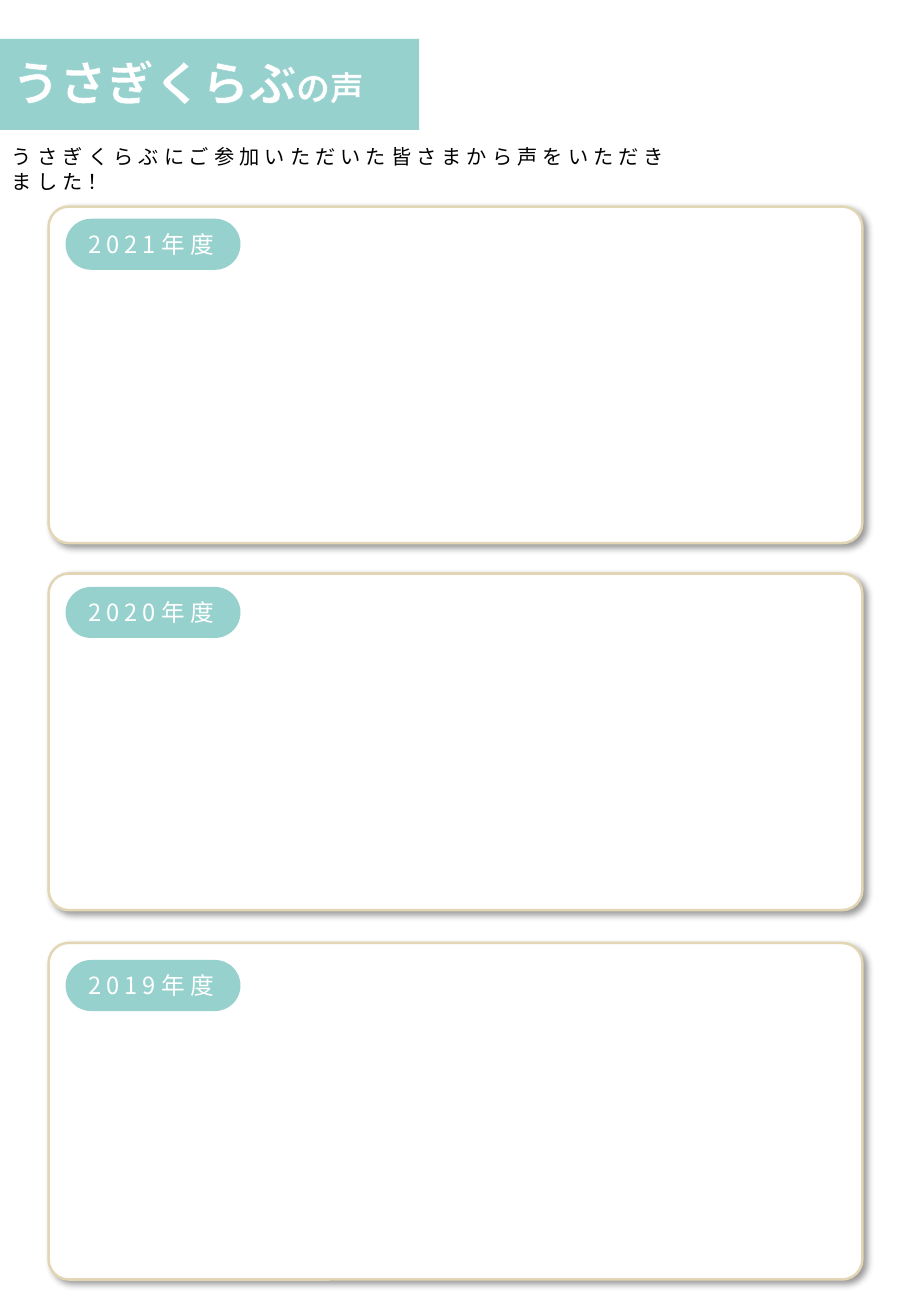
from lxml import etree
from pptx import Presentation, util as u
from pptx.dml.color import RGBColor
from pptx.enum import shapes, text
from pptx.oxml.ns import qn

COLORS = {"mint": "97D1CE", "sand": "E2D6B4", "white": "FFFFFF", "black": "000000"}
FONT = "Noto Sans CJK JP"
YEARS = [("2021年度", 1.7, 1.8), ("2020年度", 4.72, 4.83), ("2019年度", 7.76, 7.9)]


def rgb(name):
    return RGBColor.from_string(COLORS[name])


def inches(*values):
    return [u.Inches(v) for v in values]


def add_block(s, kind, box, fill, radius=None):
    sp = s.shapes.add_shape(kind, *inches(*box))
    sp.shadow.inherit = False
    sp.fill.solid()
    sp.fill.fore_color.rgb = rgb(fill)
    sp.line.fill.background()
    if radius is not None:
        sp.adjustments[0] = radius
    return sp


def add_shadow(sp):
    effects = sp.element.spPr.find(qn("a:effectLst"))
    shadow = etree.SubElement(effects, qn("a:outerShdw"), blurRad=str(u.Pt(4)),
                              dist=str(u.Pt(3)), dir=str(45 * 60000),
                              algn="tl", rotWithShape="0")
    color = etree.SubElement(shadow, qn("a:srgbClr"), val=COLORS["black"])
    etree.SubElement(color, qn("a:alpha"), val="40000")


def set_font(p, size, color, spacing=0):
    p.font.name = FONT
    p.font.size = u.Pt(size)
    p.font.color.rgb = rgb(color)
    props = p._p.pPr.find(qn("a:defRPr"))
    props.set("spc", str(spacing * 100))
    props.find(qn("a:latin")).addnext(etree.Element(qn("a:ea"), typeface=FONT))


def add_label(s, words, box, size, color):
    tf = s.shapes.add_textbox(*inches(*box)).text_frame
    tf.word_wrap = True
    tf.auto_size = text.MSO_AUTO_SIZE.SHAPE_TO_FIT_TEXT
    p = tf.paragraphs[0]
    p.text = words
    set_font(p, size, color, spacing=3)


def add_outline(r, color, width):
    line = etree.Element(qn("a:ln"), w=str(u.Pt(width)))
    fill = etree.SubElement(line, qn("a:solidFill"))
    etree.SubElement(fill, qn("a:srgbClr"), val=COLORS[color])
    r._r.get_or_add_rPr().insert(0, line)


def add_title(s):
    banner = add_block(s, shapes.MSO_SHAPE.RECTANGLE, (0, 0.32, 3.45, 0.75), "mint")
    title = s.shapes.title
    banner.element.addnext(title.element)
    title.left, title.top, title.width, title.height = inches(0, 0.39, 3.12, 0.57)
    tf = title.text_frame
    tf.word_wrap = False
    tf.auto_size = text.MSO_AUTO_SIZE.SHAPE_TO_FIT_TEXT
    tf.vertical_anchor = text.MSO_ANCHOR.TOP
    p = tf.paragraphs[0]
    p.alignment = text.PP_ALIGN.LEFT
    set_font(p, 28, "white")
    p.font.bold = True
    for words, size in [("うさぎくらぶ", 28), ("の声", 20)]:
        r = p.add_run()
        r.text = words
        r.font.size = u.Pt(size)
        add_outline(r, "mint", 0.75)


def add_year(s, year, top, pill_top):
    rounded = shapes.MSO_SHAPE.ROUNDED_RECTANGLE
    panel = add_block(s, rounded, (0.4, top, 6.7, 2.77), "white", 0.06)
    panel.line.color.rgb = rgb("sand")
    panel.line.width = u.Pt(1.5)
    add_shadow(panel)
    add_block(s, rounded, (0.54, pill_top, 1.44, 0.42), "mint", 0.5)
    add_label(s, year, (0.63, pill_top + 0.04, 1.49, 0.34), 14, "white")


def main():
    """Build the page of voices from club members, one panel per year."""
    prs = Presentation()
    prs.slide_width, prs.slide_height = inches(7.5, 10.83)
    s = prs.slides.add_slide(prs.slide_layouts[5])
    add_title(s)
    add_label(s, "うさぎくらぶにご参加いただいた皆さまから声をいただきました！",
              (0, 1.14, 5.65, 0.3), 12, "black")
    for year, top, pill_top in YEARS:
        add_year(s, year, top, pill_top)
    prs.save("out.pptx")


if __name__ == "__main__":
    main()
